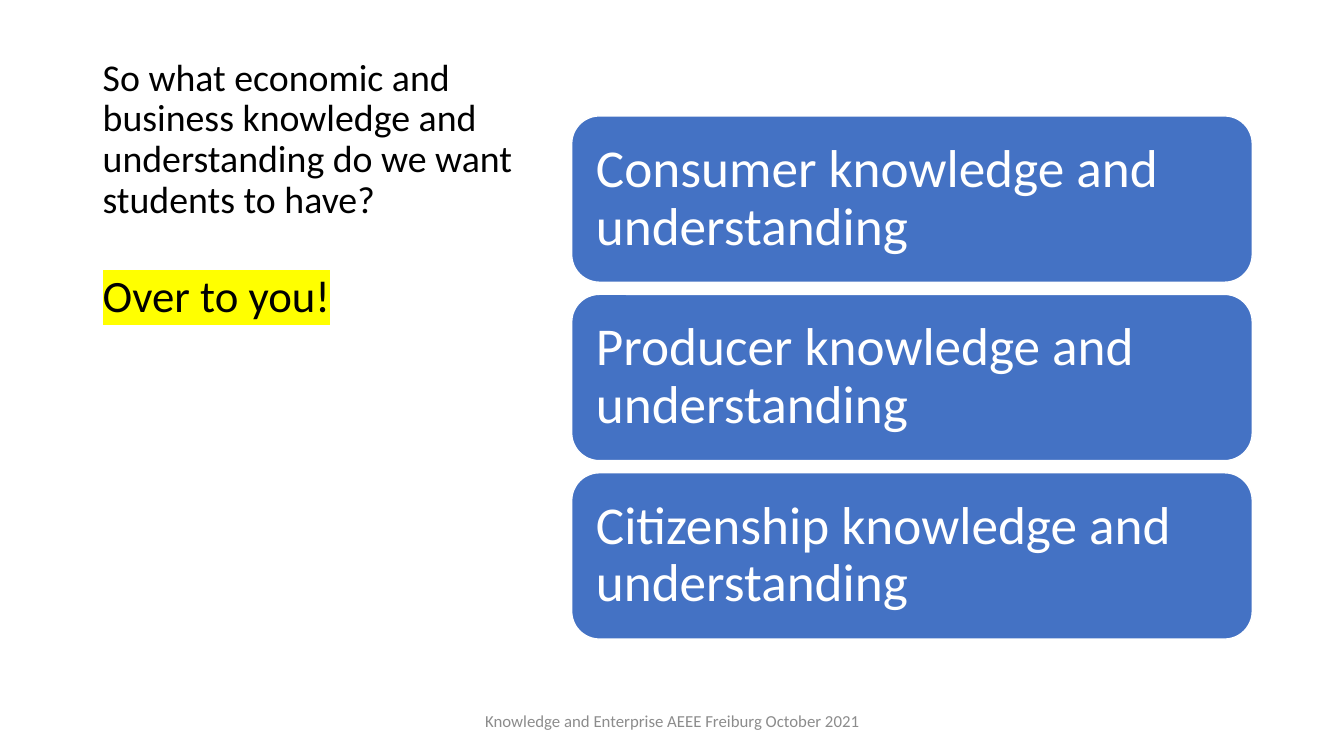
from lxml import etree
from pptx import Presentation
from pptx import util as u
from pptx.dml import color
from pptx.enum import shapes, text
from pptx.oxml import ns


def rgb(value):
    return color.RGBColor.from_string(value)


class KnowledgeSlide:
    font = "Calibri"
    ink = "000000"
    paper = "FFFFFF"
    accent = "4472C4"
    muted = "8C8C8C"
    marker = "FFFF00"

    def __init__(self, deck):
        self.slide = deck.slides.add_slide(deck.slide_layouts[6])
        self.slide.background.fill.solid()
        self.slide.background.fill.fore_color.rgb = rgb(self.paper)

    def set_wording(self, holder, wording, size, ink, anchor, align, spacing):
        frame = holder.text_frame
        frame.text = wording
        frame.word_wrap = True
        frame.vertical_anchor = anchor
        paragraph = frame.paragraphs[0]
        paragraph.alignment = align
        paragraph.line_spacing = spacing
        run = paragraph.runs[0]
        run.font.name = self.font
        run.font.size = u.Pt(size)
        run.font.color.rgb = rgb(ink)
        return run

    def label(self, box, wording, size, ink=ink, anchor=text.MSO_ANCHOR.TOP,
              align=text.PP_ALIGN.LEFT, spacing=0.9):
        holder = self.slide.shapes.add_textbox(*map(u.Inches, box))
        return self.set_wording(holder, wording, size, ink, anchor, align, spacing)

    def highlighted(self, box, wording, size):
        run = self.label(box, wording, size)
        highlight = etree.Element(ns.qn("a:highlight"))
        etree.SubElement(highlight, ns.qn("a:srgbClr"), val=self.marker)
        properties = run.font.fill._xPr
        properties.find(ns.qn("a:solidFill")).addnext(highlight)

    def card(self, box, wording, size):
        panel = self.slide.shapes.add_shape(
            shapes.MSO_SHAPE.ROUNDED_RECTANGLE, *map(u.Inches, box))
        panel.shadow.inherit = False
        panel.fill.solid()
        panel.fill.fore_color.rgb = rgb(self.accent)
        panel.line.color.rgb = rgb(self.paper)
        panel.line.width = u.Pt(1)
        frame = panel.text_frame
        frame.margin_left = frame.margin_right = u.Inches(0.16)
        self.set_wording(panel, wording, size, self.paper,
                         text.MSO_ANCHOR.MIDDLE, text.PP_ALIGN.LEFT, 0.9)


def main():
    deck = Presentation()
    deck.slide_width = u.Inches(13.33)
    deck.slide_height = u.Inches(7.5)
    page = KnowledgeSlide(deck)

    page.label((0.92, 0.5, 4.3, 1.75),
               "So what economic and business knowledge and "
               "understanding do we want students to have?",
               27, anchor=text.MSO_ANCHOR.BOTTOM)

    card_top, card_step = 1.15, 1.77
    for index, role in enumerate(("Consumer", "Producer", "Citizenship")):
        page.card((5.67, card_top + index * card_step, 6.75, 1.65),
                  f"{role} knowledge and understanding", 38)

    page.highlighted((0.92, 2.67, 4.3, 3.75), "Over to you!", 32)
    page.label((4.42, 6.95, 4.5, 0.4),
               "Knowledge and Enterprise AEEE Freiburg October 2021",
               12, page.muted, text.MSO_ANCHOR.MIDDLE,
               text.PP_ALIGN.CENTER, 1.0)
    deck.save("out.pptx")


if __name__ == "__main__":
    main()
